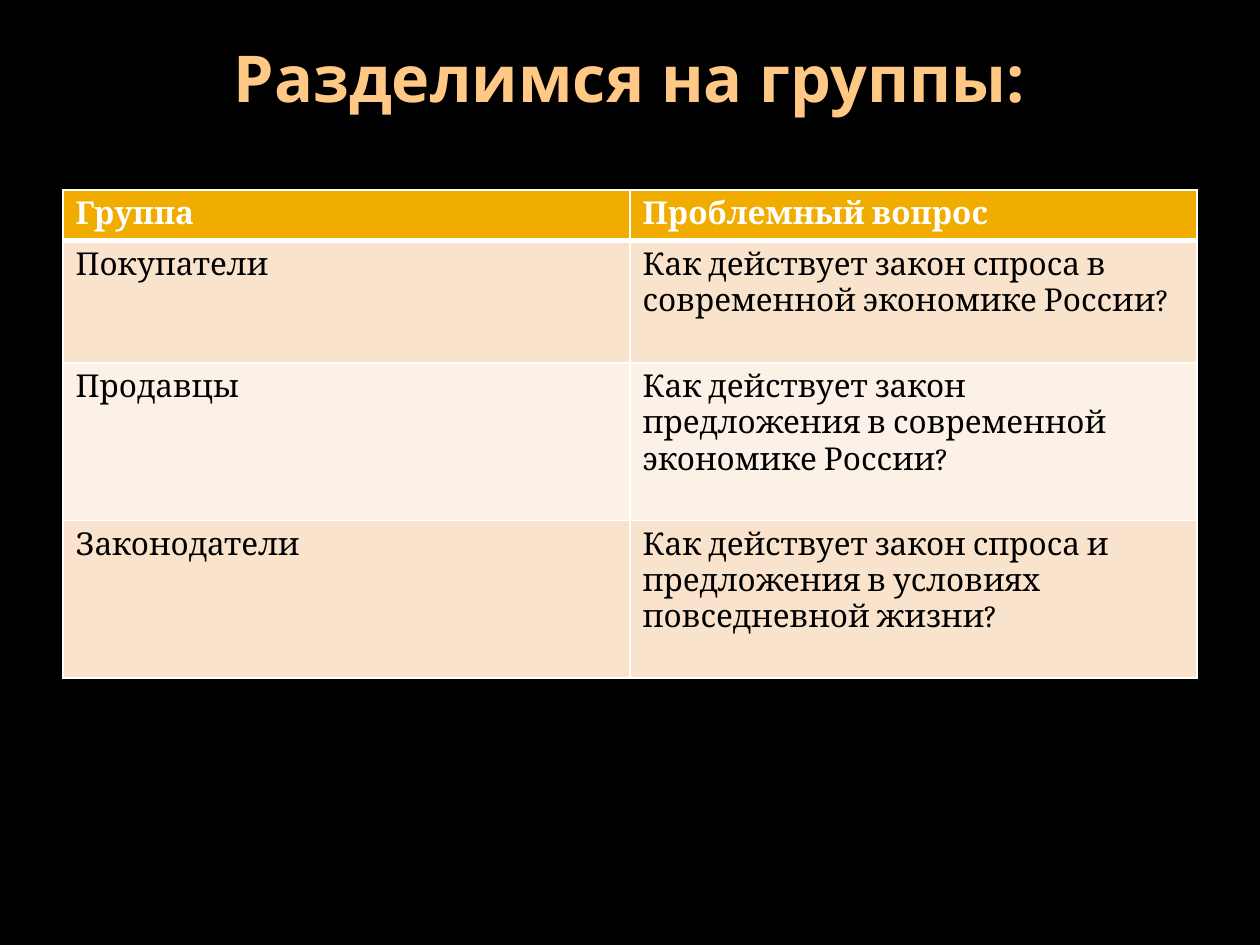
from dataclasses import dataclass

from lxml import etree
from pptx import Presentation
from pptx import util as u
from pptx.dml.color import RGBColor
from pptx.enum import text
from pptx.oxml import ns

SLIDE_WIDTH, SLIDE_HEIGHT = u.Inches(10), u.Inches(7.5)
MARGIN = 0.05  # share of the slide's width

ROWS = [
    ("Группа", "Проблемный вопрос"),
    ("Покупатели", "Как действует закон спроса в современной экономике России?"),
    ("Продавцы", "Как действует закон предложения в современной экономике России?"),
    ("Законодатели", "Как действует закон спроса и предложения в условиях повседневной жизни?"),
]
ROW_HEIGHTS = [0.4, 0.97, 1.25, 1.25]  # inches


@dataclass(frozen=True)
class Theme:
    background: str = "000000"
    title: str = "FFC985"
    header: str = "F0AD00"
    header_text: str = "FFFFFF"
    bands: tuple = ("F9E3CC", "FCF1E7")
    body_text: str = "000000"
    border: str = "FFFFFF"
    title_font: str = "Noto Sans"
    body_font: str = "Cambria"
    title_size: float = 36.9
    body_size: float = 18
    thin: float = 1
    thick: float = 3


THEME = Theme()


def paint(fill, color):
    fill.solid()
    fill.fore_color.rgb = RGBColor.from_string(color)


def format_runs(text_frame, name, size, color, bold):
    for paragraph in text_frame.paragraphs:
        for run in paragraph.runs:
            run.font.name = name
            run.font.size = u.Pt(size)
            run.font.bold = bold
            run.font.color.rgb = RGBColor.from_string(color)


def add_title(slide, title):
    shape = slide.shapes.add_textbox(
        int(SLIDE_WIDTH * MARGIN), int(SLIDE_HEIGHT * 0.04),
        int(SLIDE_WIDTH * (1 - 2 * MARGIN)), u.Inches(1.25))
    frame = shape.text_frame
    frame.word_wrap = True
    frame.vertical_anchor = text.MSO_ANCHOR.TOP
    frame.margin_top = 0
    frame.text = title
    frame.paragraphs[0].alignment = text.PP_ALIGN.CENTER
    format_runs(frame, THEME.title_font, THEME.title_size, THEME.title, True)


def set_borders(cell, widths):
    """Draw the cell's edges; widths maps the edge letters L, R, T, B to points."""
    properties = cell._tc.get_or_add_tcPr()
    for index, (edge, width) in enumerate(widths.items()):
        line = etree.Element(ns.qn(f"a:ln{edge}"), w=str(u.Pt(width)))
        fill = etree.SubElement(line, ns.qn("a:solidFill"))
        etree.SubElement(fill, ns.qn("a:srgbClr"), val=THEME.border)
        properties.insert(index, line)


def style_cell(cell, row):
    is_header = row == 0
    paint(cell.fill, THEME.header if is_header else THEME.bands[(row - 1) % 2])
    format_runs(cell.text_frame, THEME.body_font, THEME.body_size,
                THEME.header_text if is_header else THEME.body_text, is_header)
    set_borders(cell, {
        "L": THEME.thin,
        "R": THEME.thin,
        "T": THEME.thick if row == 1 else THEME.thin,
        "B": THEME.thick if is_header else THEME.thin,
    })


def add_group_table(slide):
    width = int(SLIDE_WIDTH * (1 - 2 * MARGIN))
    table = slide.shapes.add_table(
        len(ROWS), len(ROWS[0]), int(SLIDE_WIDTH * MARGIN), u.Inches(1.51),
        width, u.Inches(sum(ROW_HEIGHTS))).table
    for row, (height, values) in enumerate(zip(ROW_HEIGHTS, ROWS)):
        table.rows[row].height = u.Inches(height)
        for column, value in enumerate(values):
            cell = table.cell(row, column)
            cell.text_frame.text = value
            style_cell(cell, row)


def main():
    presentation = Presentation()
    presentation.slide_width, presentation.slide_height = SLIDE_WIDTH, SLIDE_HEIGHT
    slide = presentation.slides.add_slide(presentation.slide_layouts[6])
    paint(slide.background.fill, THEME.background)
    add_title(slide, "Разделимся на группы:")
    add_group_table(slide)
    presentation.save("out.pptx")


if __name__ == "__main__":
    main()
